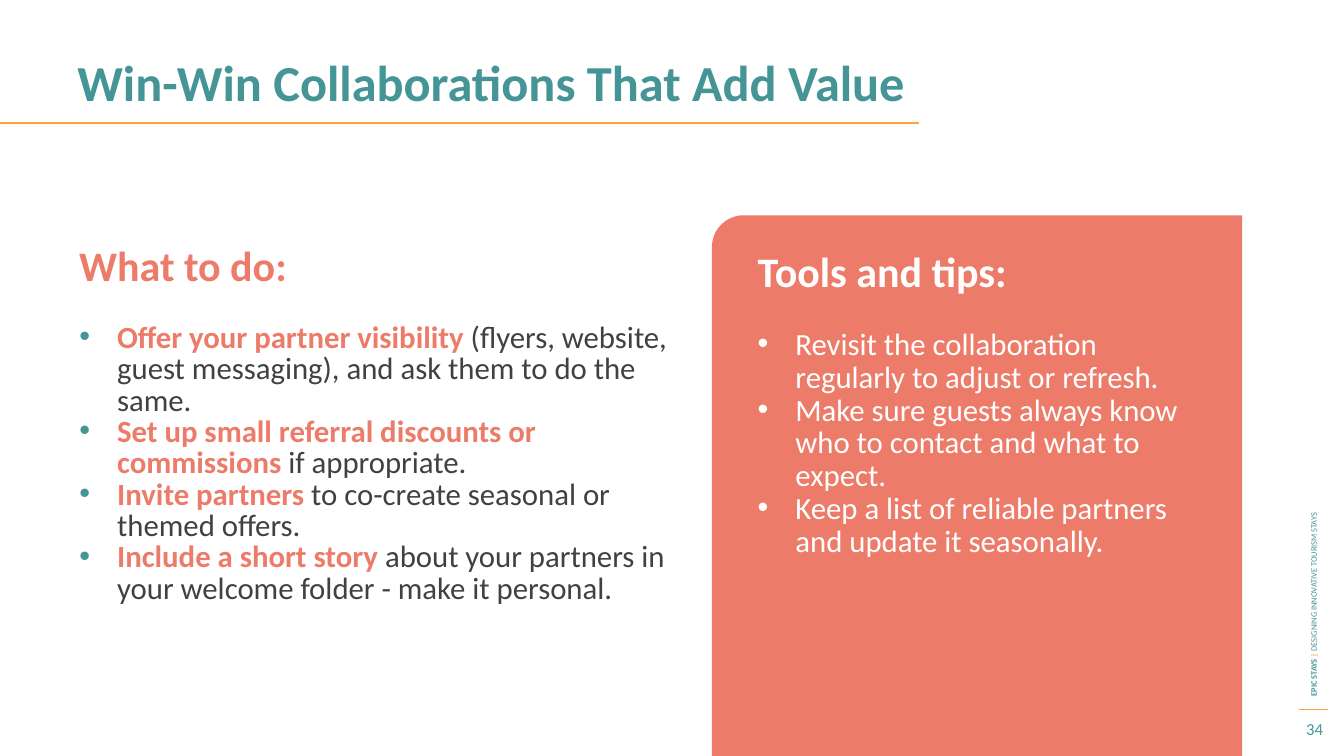
from lxml.etree import SubElement
from pptx import Presentation
from pptx.dml.color import RGBColor
from pptx.enum.shapes import MSO_CONNECTOR, MSO_SHAPE
from pptx.enum.text import MSO_ANCHOR as ANCHOR, MSO_AUTO_SIZE, PP_ALIGN as ALIGN
from pptx.oxml.ns import qn
from pptx.util import Emu, Pt

PX = 9525
COLORS = {
    "teal": "459597",
    "orange": "FBA63B",
    "rule": "FBA63D",
    "coral": "EC7C69",
    "text": "414141",
    "white": "FFFFFF",
}


def place(shape, left, top, width, height):
    shape.left, shape.top = Emu(left * PX), Emu(top * PX)
    shape.width, shape.height = Emu(width * PX), Emu(height * PX)
    return shape


def write(paragraph, runs, size, spacing=None, before=0, bullet=None, align=ALIGN.LEFT):
    pPr = paragraph._p.get_or_add_pPr()
    pPr.set("marL", str(36 * PX if bullet else 0))
    pPr.set("indent", str(-36 * PX if bullet else 0))
    if bullet:
        SubElement(SubElement(pPr, qn("a:buClr")), qn("a:srgbClr"), val=COLORS[bullet])
        SubElement(pPr, qn("a:buFont"), typeface="Arial")
        SubElement(pPr, qn("a:buChar"), char="•")
    else:
        SubElement(pPr, qn("a:buNone"))
    paragraph.alignment = align
    paragraph.space_before = Pt(before)
    paragraph.space_after = Pt(0)
    if spacing:
        paragraph.line_spacing = Pt(spacing)
    for text, color, bold in runs:
        run = paragraph.add_run()
        run.text = text
        run.font.name = "Calibri"
        run.font.size = Pt(size)
        run.font.bold = bold
        run.font.color.rgb = RGBColor.from_string(COLORS[color])


prs = Presentation()
prs.slide_width, prs.slide_height = Emu(1280 * PX), Emu(720 * PX)
slide = prs.slides.add_slide(prs.slide_layouts[3])
shapes = slide.shapes

panel_left, panel_top, panel_width, panel_height = 678, 205, 505, 515
turn = (panel_width - panel_height) // 2
panel = shapes.add_shape(MSO_SHAPE.ROUND_1_RECTANGLE, 0, 0, 0, 0)
place(panel, panel_left + turn, panel_top - turn, panel_height, panel_width)
panel.rotation = 270
panel.adjustments[0] = 0.06
panel.shadow.inherit = False
panel.fill.solid()
panel.fill.fore_color.rgb = RGBColor.from_string(COLORS["coral"])
panel.line.fill.background()
shapes._spTree.remove(panel._element)
shapes._spTree.insert(2, panel._element)

for start, end, y, color, weight in [
    (0, 875, 117, "orange", 1.5),
    (1237, 1265, 676, "rule", 0.75),
]:
    rule = shapes.add_connector(
        MSO_CONNECTOR.STRAIGHT, Emu(start * PX), Emu(y * PX), Emu(end * PX), Emu(y * PX)
    )
    rule.line.color.rgb = RGBColor.from_string(COLORS[color])
    rule.line.width = Pt(weight)
    SubElement(rule._element.spPr, qn("a:effectLst"))

title = place(shapes.title, 64, 52, 1152, 84)
actions = place(slide.placeholders[1], 66, 303, 589, 384)
tips = place(slide.placeholders[2], 712, 246, 436, 345)
heading = place(shapes.add_textbox(0, 0, 0, 0), 66, 233, 589, 84)
footer = place(shapes.add_textbox(0, 0, 0, 0), 974, 386, 554, 19)
number = place(shapes.add_textbox(0, 0, 0, 0), 1227, 678, 50, 33)
footer.rotation = 270

for box, anchor in [
    (title, ANCHOR.TOP),
    (actions, ANCHOR.TOP),
    (tips, ANCHOR.TOP),
    (heading, ANCHOR.TOP),
    (footer, ANCHOR.MIDDLE),
    (number, ANCHOR.MIDDLE),
]:
    box.text_frame.word_wrap = True
    box.text_frame.auto_size = MSO_AUTO_SIZE.NONE
    box.text_frame.vertical_anchor = anchor

write(
    title.text_frame.paragraphs[0],
    [("Win-Win Collaborations That Add Value", "teal", True)],
    size=36,
    spacing=37.2,
)
write(heading.text_frame.paragraphs[0], [("What to do:", "coral", True)], size=30, spacing=29)
write(
    footer.text_frame.paragraphs[0],
    [
        ("EPIC STAYS ", "teal", True),
        ("| ", "orange", True),
        ("DESIGNING INNOVATIVE TOURISM STAYS", "teal", False),
    ],
    size=6,
)
write(number.text_frame.paragraphs[0], [("34", "teal", False)], size=12, align=ALIGN.CENTER)

for index, (action, detail) in enumerate([
    (
        "Offer your partner visibility ",
        "(flyers, website, guest messaging), and ask them to do the same.",
    ),
    ("Set up small referral discounts or commissions ", "if appropriate."),
    ("Invite partners ", "to co-create seasonal or themed offers."),
    (
        "Include a short story ",
        "about your partners in your welcome folder - make it personal.",
    ),
]):
    frame = actions.text_frame
    paragraph = frame.add_paragraph() if index else frame.paragraphs[0]
    runs = [(action, "coral", True), (detail, "text", False)]
    write(paragraph, runs, size=22, spacing=22.4, bullet="teal")

write(
    tips.text_frame.paragraphs[0], [("Tools and tips:", "white", True)], size=30, spacing=23.4
)
for index, tip in enumerate([
    "Revisit the collaboration regularly to adjust or refresh.",
    "Make sure guests always know who to contact and what to expect.",
    "Keep a list of reliable partners and update it seasonally.",
]):
    write(
        tips.text_frame.add_paragraph(),
        [(tip, "white", False)],
        size=22,
        spacing=23.4,
        before=0 if index else 23.4,
        bullet="white",
    )

prs.save("out.pptx")
